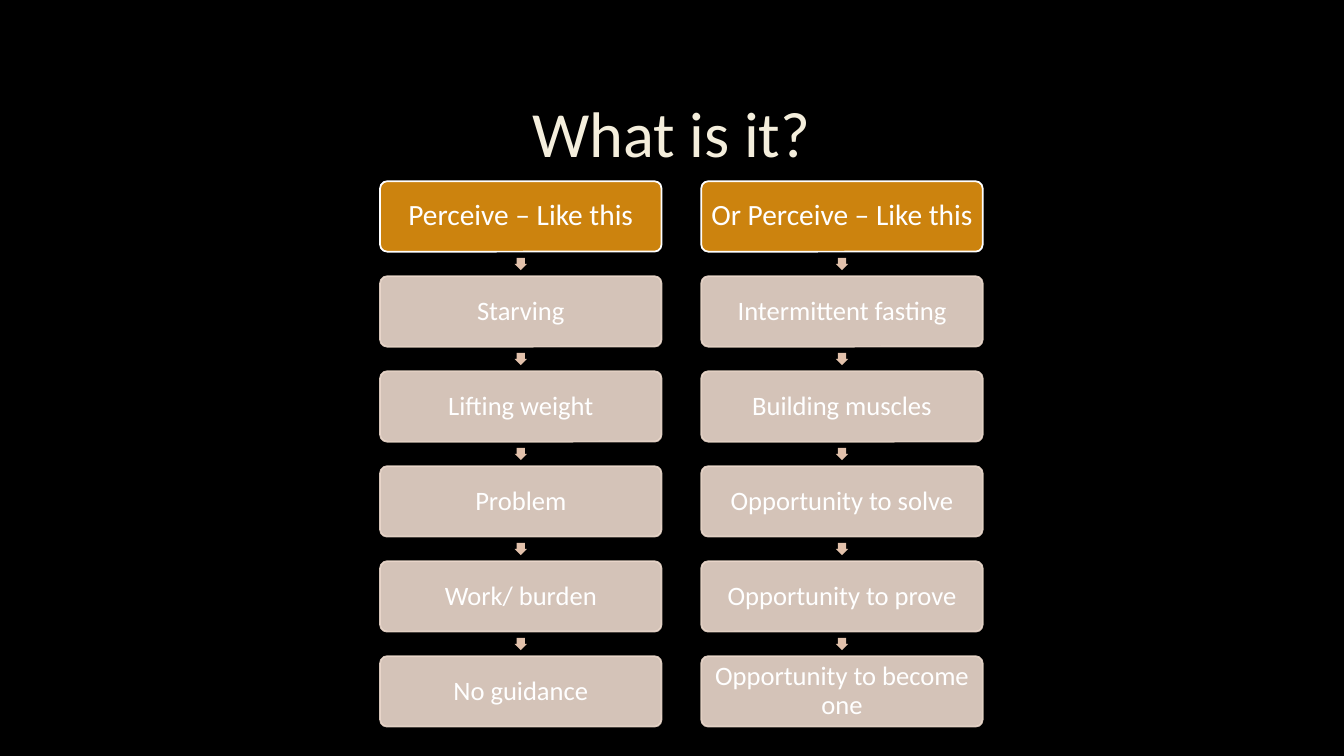
import pptx
import pptx.dml.color
import pptx.enum.shapes
import pptx.enum.text
import pptx.oxml.ns
import pptx.util
from lxml import etree

Pt = pptx.util.Pt
SHAPES = pptx.enum.shapes.MSO_SHAPE


def rgb(value):
    return pptx.dml.color.RGBColor.from_string(value)


class Deck:
    font = "Calibri"
    white = "FFFFFF"

    def __init__(self, width, height):
        self.prs = pptx.Presentation()
        self.prs.slide_width, self.prs.slide_height = Pt(width), Pt(height)

    def add_slide(self, background):
        self.s = self.prs.slides.add_slide(self.prs.slide_layouts[5])
        self.paint(self.s.background.fill, background)

    def paint(self, fill, color, alpha=100):
        fill.solid()
        fill.fore_color.rgb = rgb(color)
        if alpha < 100:
            clr = fill._xPr.find(".//" + pptx.oxml.ns.qn("a:srgbClr"))
            etree.SubElement(clr, pptx.oxml.ns.qn("a:alpha"), val=str(alpha * 1000))

    def set_text(self, sp, text, size, color):
        tf = sp.text_frame
        tf.word_wrap = True
        tf.auto_size = pptx.enum.text.MSO_AUTO_SIZE.NONE
        tf.vertical_anchor = pptx.enum.text.MSO_ANCHOR.MIDDLE
        p = tf.paragraphs[0]
        p.text = text
        p.alignment = pptx.enum.text.PP_ALIGN.CENTER
        p.line_spacing = 0.9
        p.font.name, p.font.size, p.font.bold = self.font, Pt(size), False
        p.font.color.rgb = rgb(color)

    def title(self, text, left, top, width, height, size, color):
        sp = self.s.shapes.title
        sp.left, sp.top, sp.width, sp.height = map(Pt, (left, top, width, height))
        self.set_text(sp, text, size, color)

    def shape(self, kind, left, top, width, height, fill, alpha=100):
        sp = self.s.shapes.add_shape(kind, *map(Pt, (left, top, width, height)))
        sp.shadow.inherit = False
        self.paint(sp.fill, fill, alpha)
        return sp

    def box(self, text, left, top, width, height, size, fill, line, alpha=100):
        sp = self.shape(SHAPES.ROUNDED_RECTANGLE, left, top, width, height, fill, alpha)
        sp.adjustments[0] = 0.1
        sp.line.width = Pt(1.25)
        self.paint(sp.line.fill, line, alpha)
        tf = sp.text_frame
        tf.margin_left = tf.margin_right = tf.margin_top = tf.margin_bottom = Pt(2.2)
        self.set_text(sp, text, size, self.white)

    def arrow_down(self, center_x, center_y, size, fill):
        sp = self.shape(SHAPES.RIGHT_ARROW, center_x - size / 2, center_y - size / 2,
                        size, size, fill)
        sp.adjustments[0], sp.adjustments[1] = 0.67, 0.5
        sp.line.fill.background()
        sp.rotation = 90


COLUMNS = [
    ["Perceive – Like this", "Starving", "Lifting weight", "Problem",
     "Work/ burden", "No guidance"],
    ["Or Perceive – Like this", "Intermittent fasting", "Building muscles",
     "Opportunity to solve", "Opportunity to prove", "Opportunity to become one"],
]
LEFT, TOP = 271.5, 129.5
BOX_W, BOX_H = 201, 50.3
COLUMN_STEP, ROW_STEP = 229.4, 67.85

deck = Deck(960, 540)
deck.add_slide("000000")
deck.title("What is it?", 72, 48, 815, 99.5, 46, "F4EEDC")

for column, labels in enumerate(COLUMNS):
    x = LEFT + column * COLUMN_STEP
    for row, label in enumerate(labels):
        y = TOP + row * ROW_STEP
        if row == 0:
            deck.box(label, x, y, BOX_W, BOX_H, 21, "CC830E", deck.white)
        else:
            deck.arrow_down(x + BOX_W / 2, y - (ROW_STEP - BOX_H) / 2, 8.8, "E2C1AB")
            deck.box(label, x, y, BOX_W, BOX_H, 19, "ECD9CC", "ECD9CC", alpha=90)

deck.prs.save("out.pptx")
